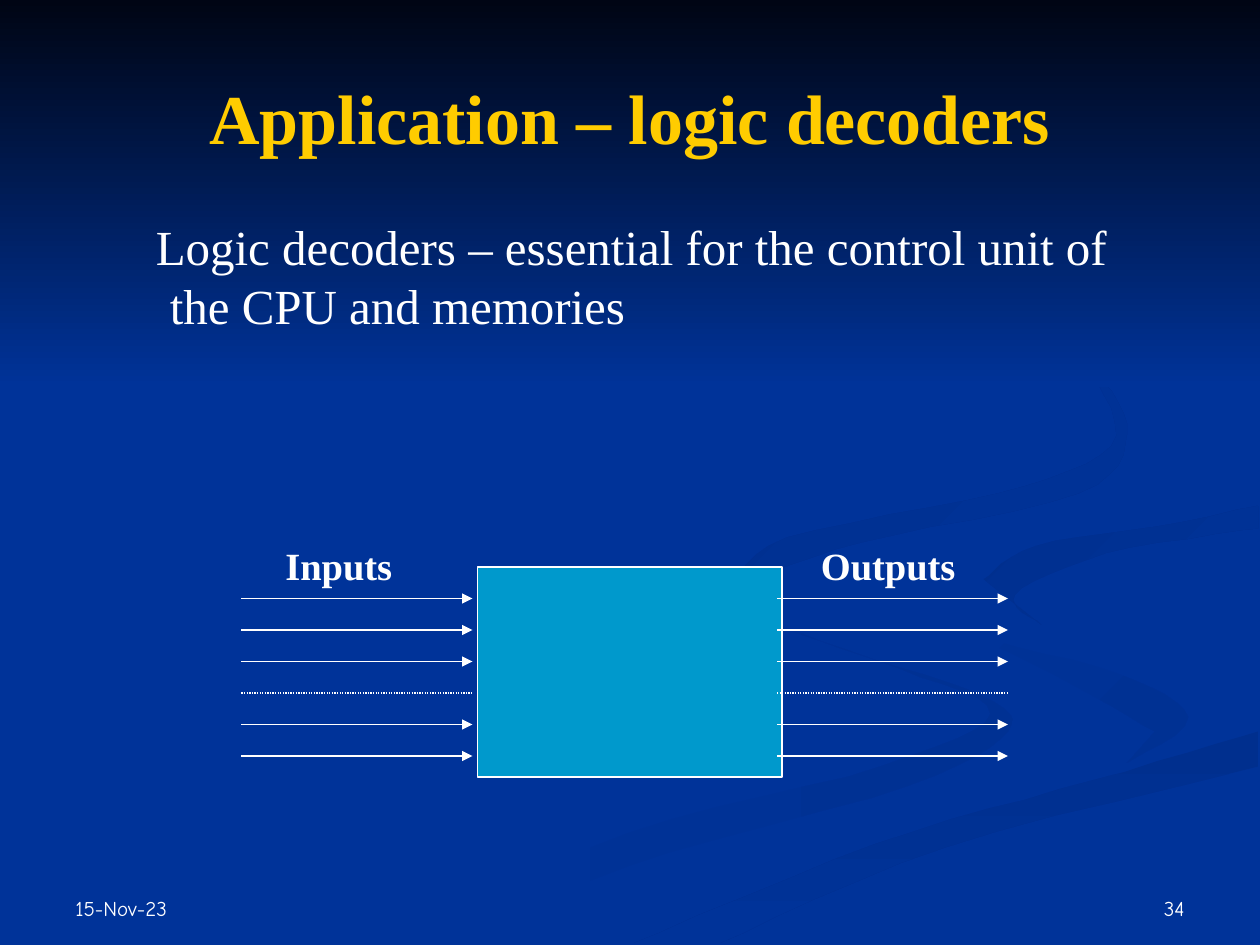
from dataclasses import dataclass

from lxml.etree import SubElement
from pptx import Presentation
from pptx.dml.color import RGBColor
from pptx.enum.dml import MSO_LINE
from pptx.enum.shapes import MSO_CONNECTOR, MSO_SHAPE
from pptx.enum.text import MSO_ANCHOR, PP_ALIGN
from pptx.oxml.ns import qn
from pptx.util import Pt


@dataclass(frozen=True)
class Theme:
    """Colours, fonts and type sizes of the slide."""

    background: str = "003399"
    shade: str = "002F8E"
    pale_shade: str = "003193"
    night: str = "000514"
    block: str = "0099CC"
    white: str = "FFFFFF"
    gold: str = "FFCC00"
    serif: str = "Times New Roman"
    footer_font: str = "Comic Neue"
    title_size: float = 40
    body_size: float = 28
    label_size: float = 22
    footer_size: float = 12
    line_width: float = 0.75


THEME = Theme()

RIBBONS = [
    (THEME.background, THEME.pale_shade, 0,
     [(414, 330), (428, 349), (491, 374), (562, 398), (576, 418), (519, 449), (359, 495),
      (260, 539)],
     [(216, 539), (359, 476), (503, 438), (566, 408), (514, 382), (422, 351)]),
    (THEME.background, THEME.pale_shade, 45,
     [(521, 334), (557, 362), (639, 385), (679, 410), (644, 436)],
     [(660, 418), (603, 386), (528, 351)]),
    (THEME.shade, THEME.background, 90,
     [(719, 418), (624, 446), (501, 482), (362, 539)],
     [(411, 539), (541, 484), (719, 438)]),
    (THEME.shade, THEME.background, 45,
     [(562, 331), (592, 312), (672, 299), (719, 289)],
     [(719, 302), (632, 316), (580, 340), (595, 357)]),
    (THEME.shade, THEME.background, 45,
     [(549, 168), (622, 210), (644, 248), (616, 282), (492, 310), (428, 335), (448, 360)],
     [(418, 335), (450, 307), (570, 282), (635, 255), (626, 215)]),
]


def color(value):
    """Return the colour object for a hexadecimal value."""
    return RGBColor.from_string(value)


def smooth(points, steps=6):
    """Return the points of a Catmull-Rom curve through the given points."""
    padded = [points[0], *points, points[-1]]
    curve = []
    for a, b, c, d in zip(padded, padded[1:], padded[2:], padded[3:]):
        for step in range(steps):
            t = step / steps
            curve.append(tuple(
                q + t * ((r - p) + t * ((2 * p - 5 * q + 4 * r - s)
                                        + t * (3 * q - p - 3 * r + s))) / 2
                for p, q, r, s in zip(a, b, c, d)))
    return curve + [points[-1]]


def paint(shape, start, end=None, angle=0):
    """Fill a shape plainly or with a gradient turned clockwise, without line or shadow."""
    shape.shadow.inherit = False
    shape.line.fill.background()
    if end is None:
        shape.fill.solid()
        shape.fill.fore_color.rgb = color(start)
        return
    shape.fill.gradient()
    shape.fill.gradient_angle = (360 - angle) % 360
    for stop, value in zip(shape.fill.gradient_stops, (start, end)):
        stop.color.rgb = color(value)


def add_text(slide, box, text, *, size, font=THEME.serif, ink=THEME.white, bold=False,
             align=PP_ALIGN.LEFT, anchor=MSO_ANCHOR.TOP, margin=0, indent=0):
    """Place one paragraph of text in a box."""
    frame = slide.shapes.add_textbox(*map(Pt, box)).text_frame
    frame.word_wrap = True
    frame.vertical_anchor = anchor
    paragraph = frame.paragraphs[0]
    paragraph.alignment = align
    if margin:
        properties = paragraph._p.get_or_add_pPr()
        properties.set("marL", str(Pt(margin)))
        properties.set("indent", str(Pt(indent)))
    run = paragraph.add_run()
    run.text = text
    run.font.size = Pt(size)
    run.font.name = font
    run.font.bold = bold
    run.font.color.rgb = color(ink)


def add_signal(slide, left, top, length, dotted):
    """Draw a horizontal signal: an arrow, or a dotted line for those left out."""
    connector = slide.shapes.add_connector(
        MSO_CONNECTOR.STRAIGHT, Pt(left), Pt(top), Pt(left + length), Pt(top))
    connector.line.color.rgb = color(THEME.white)
    connector.line.width = Pt(THEME.line_width)
    if dotted:
        connector.line.dash_style = MSO_LINE.ROUND_DOT
    else:
        SubElement(connector.line._get_or_add_ln(), qn("a:tailEnd"), type="triangle")
    SubElement(connector._element.spPr, qn("a:effectLst"))


def add_backdrop(slide, box):
    """Draw the ribbons and the dark fade at the top of the box."""
    left, top, width, height = box
    slide.background.fill.solid()
    slide.background.fill.fore_color.rgb = color(THEME.background)
    for start, end, angle, outer, inner in RIBBONS:
        outline = [(left + x, top + y) for x, y in smooth(outer) + smooth(inner)]
        builder = slide.shapes.build_freeform(*outline[0], scale=Pt(1))
        builder.add_line_segments(outline[1:], close=True)
        paint(builder.convert_to_shape(), start, end, angle)
    fade = slide.shapes.add_shape(
        MSO_SHAPE.RECTANGLE, Pt(left), Pt(top), Pt(width), Pt(height * 0.41))
    paint(fade, THEME.night, THEME.background, 90)


def add_footer(slide, box, date, number):
    """Write the date at the left and the slide number at the right of the box."""
    left, top, width, height = box
    field = 108
    for text, start, align in ((date, left, PP_ALIGN.LEFT),
                               (number, left + width - field, PP_ALIGN.RIGHT)):
        add_text(slide, (start, top, field, height), text, size=THEME.footer_size,
                 font=THEME.footer_font, align=align, anchor=MSO_ANCHOR.BOTTOM)


def add_decoder(slide, box):
    """Draw the decoder block with its labelled input and output signals."""
    left, top, width, height = box
    signal_length, signal_gap, dotted_row = 132, 18, 3
    block = slide.shapes.add_shape(
        MSO_SHAPE.RECTANGLE, Pt(left + 135), Pt(top + 18), Pt(width - 264), Pt(height - 18))
    paint(block, THEME.block)
    block.line.color.rgb = color(THEME.white)
    block.line.width = Pt(THEME.line_width)
    for label, start in (("Inputs", left), ("Outputs", left + width - signal_length)):
        for row in range(6):
            add_signal(slide, start, top + 36 + row * signal_gap, signal_length,
                       row == dotted_row)
        add_text(slide, (start + 18, top, 96, 34), label, size=THEME.label_size, bold=True)


def main():
    """Build the slide and save it."""
    presentation = Presentation()
    presentation.slide_width, presentation.slide_height = Pt(720), Pt(540)
    slide = presentation.slides.add_slide(presentation.slide_layouts[6])
    add_backdrop(slide, (0, 0, 720, 540))
    add_footer(slide, (36, 492, 648, 37.5), "15-Nov-23", "34")
    add_text(slide, (0, 21.6, 720, 90), "Application – logic decoders", size=THEME.title_size,
             ink=THEME.gold, bold=True, align=PP_ALIGN.CENTER, anchor=MSO_ANCHOR.MIDDLE)
    add_text(slide, (54, 120, 618, 143),
             "Logic decoders – essential for the control unit of the CPU and memories",
             size=THEME.body_size, margin=36, indent=-8)
    add_decoder(slide, (138, 306, 438, 138))
    presentation.save("out.pptx")


if __name__ == "__main__":
    main()
